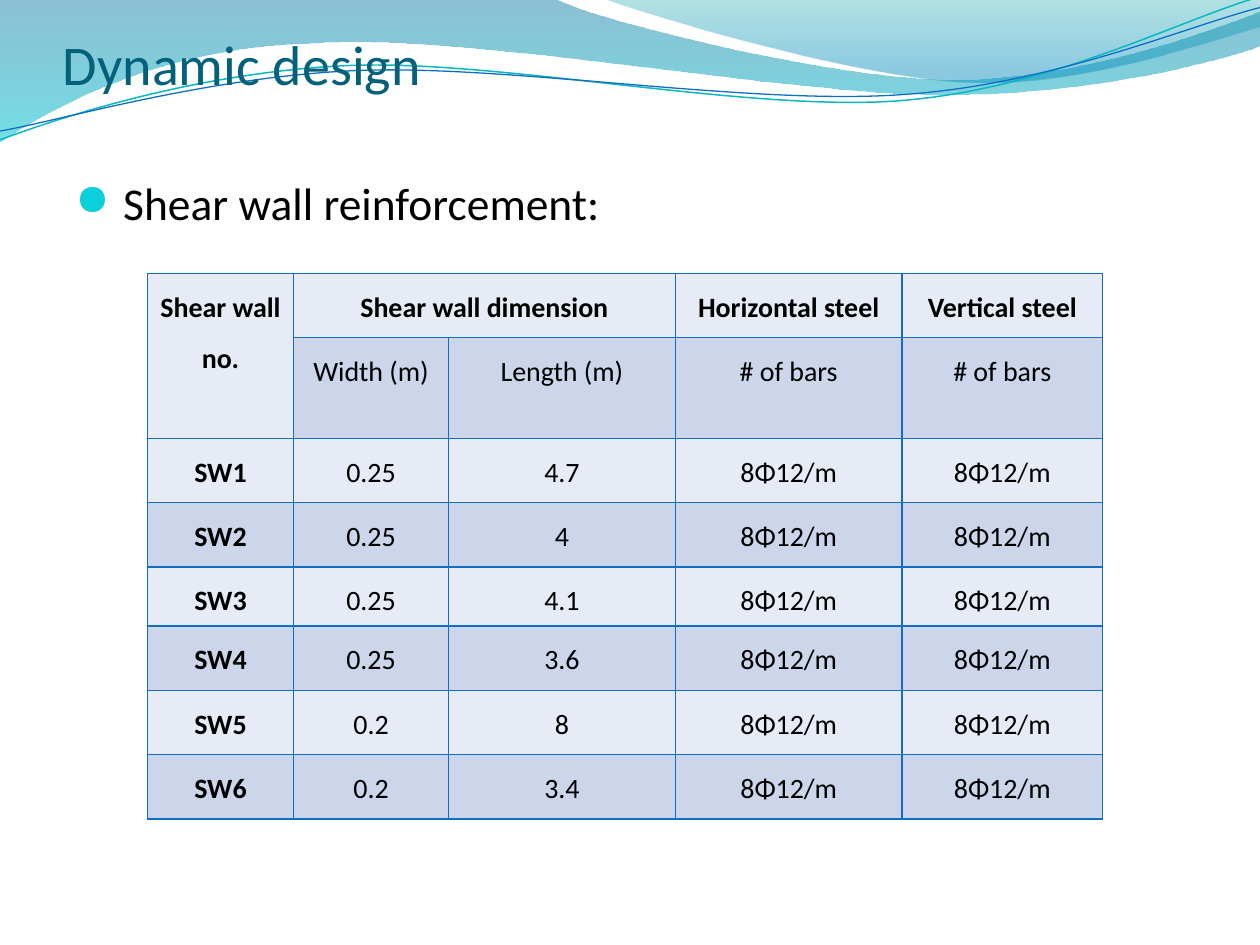
from math import cos, radians, sin

from lxml import etree
from pptx import Presentation
from pptx.dml.color import RGBColor
from pptx.enum.text import MSO_ANCHOR, PP_ALIGN
from pptx.oxml import parse_xml
from pptx.oxml.ns import qn
from pptx.util import Inches, Pt

BOTTOM, TOP = MSO_ANCHOR.BOTTOM, MSO_ANCHOR.TOP
CENTER = PP_ALIGN.CENTER
NS = 'xmlns:a="http://schemas.openxmlformats.org/drawingml/2006/main"'
TILT = 2.7


def rgb(code):
    return RGBColor.from_string(code)


def trace(start, parts, closed):
    """Draw a path of points (2 numbers) and cubic curves (6 numbers)."""
    pts = [(Inches(part[i]), Inches(part[i + 1]))
           for part in parts for i in range(0, len(part), 2)]
    pen = slide.shapes.build_freeform(Inches(start[0]), Inches(start[1]))
    pen.add_line_segments(pts, close=closed)
    shape = pen.convert_to_shape()
    shape.shadow.inherit = False
    legs = iter(list(shape.element.iter(qn("a:lnTo"))))
    for part in parts:
        leg = next(legs)
        if len(part) == 6:
            leg.addprevious(curve := etree.Element(qn("a:cubicBezTo")))
            for old in (leg, next(legs), next(legs)):
                curve.append(old[0])
                old.getparent().remove(old)
    return shape


prs = Presentation()
prs.slide_width, prs.slide_height = Inches(10), Inches(7.5)
slide = prs.slides.add_slide(prs.slide_layouts[6])

# Waves: start, parts, gradient stops (position, colour, opacity)
waves = [
    ((0, 0),
     [(4.4, -0.01), (4.76, 0.17, 6.64, 0.63, 7.58, 0.63),
      (8.53, 0.63, 9.58, 0.26, 10, 0.09), (10.01, 0.36),
      (9.83, 0.44, 8.7, 0.76, 7.46, 0.75),
      (6.22, 0.75, 3.82, 0.28, 2.57, 0.34),
      (1.29, 0.36, 0.46, 0.83, -0.01, 1.13)],
     [(0, "0074A1", 45), (1, "00C6CF", 55)]),
    ((4.79, -0.01),
     [(5.09, 0.11, 6.82, 0.62, 7.69, 0.65),
      (8.56, 0.69, 9.61, 0.32, 10, 0.21), (10, 0)],
     [(0, "00A1A9", 30), (0.8, "008BBF", 45)]),
]
for start, parts, stops in waves:
    wave = trace(start, parts, True)
    wave.line.fill.background()
    wave.fill.gradient()
    wave.fill.gradient_angle = 270
    for stop, (pos, code, _) in zip(wave.fill.gradient_stops, stops):
        stop.position = pos
        stop.color.rgb = rgb(code)
    for clr, (_, _, alpha) in zip(wave.element.spPr.iter(qn("a:srgbClr")), stops):
        etree.SubElement(clr, qn("a:alpha")).set("val", str(alpha * 1000))

# Thin lines over the waves, laid level about their middle and then tilted
lines = [
    ((0, 1.11),
     [(0.48, 0.93, 1.58, 0.57, 2.77, 0.52), (3.95, 0.47, 5.93, 0.89, 7.13, 0.8),
      (8.33, 0.71, 9.38, 0.15, 9.98, -0.02)], "0AB8BF", 0.85),
    ((0, 1.04),
     [(0.47, 0.96, 1.64, 0.61, 2.83, 0.56), (4.03, 0.51, 5.97, 0.84, 7.17, 0.75),
      (8.36, 0.67, 9.41, 0.21, 10, 0.06)], "0F6FC6", 0.75),
]
turn = radians(TILT)
mid = (4.99, 0.58)
for start, parts, code, width in lines:
    level = []
    for part in [start, *parts]:
        flat = []
        for x, y in zip(part[::2], part[1::2]):
            dx, dy = x - mid[0], y - mid[1]
            flat += [mid[0] + dx * cos(turn) - dy * sin(turn),
                     mid[1] + dx * sin(turn) + dy * cos(turn)]
        level.append(flat)
    line = trace(level[0], level[1:], False)
    line.rotation = 360 - TILT
    line.fill.background()
    line.line.color.rgb = rgb(code)
    line.line.width = Pt(width)

# Title and bullet
texts = [
    ("Dynamic design", (0.5, 0.17, 9, 0.6), 32, "04617B",
     {"vertical_anchor": BOTTOM, "margin_left": 0, "margin_right": 0,
      "margin_bottom": 0}),
    ("Shear wall reinforcement:", (0.5, 0.83, 9, 6.08), 26, "000000",
     {"vertical_anchor": TOP, "margin_top": Inches(0.56)}),
]
for text, place, size, code, look in texts:
    box = slide.shapes.add_textbox(*map(Inches, place))
    frame = box.text_frame
    for name, value in {"word_wrap": True, **look}.items():
        setattr(frame, name, value)
    para = frame.paragraphs[0]
    run = para.add_run()
    run.text = text
    for name, value in {"name": "Calibri", "size": Pt(size)}.items():
        setattr(run.font, name, value)
    run.font.color.rgb = rgb(code)

props = para._p.get_or_add_pPr()
props.set("marL", str(Inches(0.38)))
props.set("indent", str(Inches(-0.38)))
for xml in (f'<a:buClr {NS}><a:srgbClr val="0BD0D9"/></a:buClr>',
            f'<a:buSzPct {NS} val="95000"/>',
            f'<a:buFont {NS} typeface="OpenSymbol"/>',
            f'<a:buChar {NS} char="●"/>'):
    props.append(parse_xml(xml))

# Reinforcement table
steel = "8Φ12/m"
walls = [("0.25", "4.7"), ("0.25", "4"), ("0.25", "4.1"),
         ("0.25", "3.6"), ("0.2", "8"), ("0.2", "3.4")]
rows = [
    ("Shear wall no.", "Shear wall dimension", "", "Horizontal steel",
     "Vertical steel"),
    ("", "Width (m)", "Length (m)", "# of bars", "# of bars"),
]
rows += [(f"SW{n}", *size, steel, steel) for n, size in enumerate(walls, 1)]
widths = [1.16, 1.23, 1.8, 1.8, 1.59]
heights = [0.51, 0.57, 0.51, 0.51, 0.47, 0.51, 0.51, 0.51]

table = slide.shapes.add_table(
    len(rows), len(widths), Inches(1.17), Inches(2.17),
    Inches(sum(widths)), Inches(sum(heights))).table
for col, width in zip(table.columns, widths):
    col.width = Inches(width)
for row, height in zip(table.rows, heights):
    row.height = Inches(height)
table.first_row = table.horz_banding = False
table.cell(0, 0).merge(table.cell(1, 0))
table.cell(0, 1).merge(table.cell(0, 2))
table.cell(1, 0).text_frame.paragraphs[0].space_before = Pt(1.5)

pad = {"margin_left": Inches(0.07), "margin_right": Inches(0.07),
       "margin_top": 0, "margin_bottom": 0}
flow = {"alignment": CENTER, "line_spacing": 1.5,
        "space_before": Pt(6), "space_after": Pt(6)}
for r, row in enumerate(rows):
    for c, text in enumerate(row):
        cell = table.cell(r, c)
        for name, value in pad.items():
            setattr(cell, name, value)
        for side in "LRTB":
            cell._tc.get_or_add_tcPr().append(parse_xml(
                f'<a:ln{side} {NS} w="{Pt(1)}"><a:solidFill>'
                f'<a:srgbClr val="0F6FC6"/></a:solidFill></a:ln{side}>'))
        cell.fill.solid()
        cell.fill.fore_color.rgb = rgb("CCD5EA" if r % 2 else "E7EBF5")
        if not text:
            continue
        para = cell.text_frame.paragraphs[0]
        for name, value in flow.items():
            setattr(para, name, value)
        run = para.add_run()
        run.text = text
        bold = r == 0 or c == 0
        for name, value in {"name": "Calibri", "size": Pt(16), "bold": bold}.items():
            setattr(run.font, name, value)
        run.font.color.rgb = rgb("000000")

prs.save("out.pptx")
